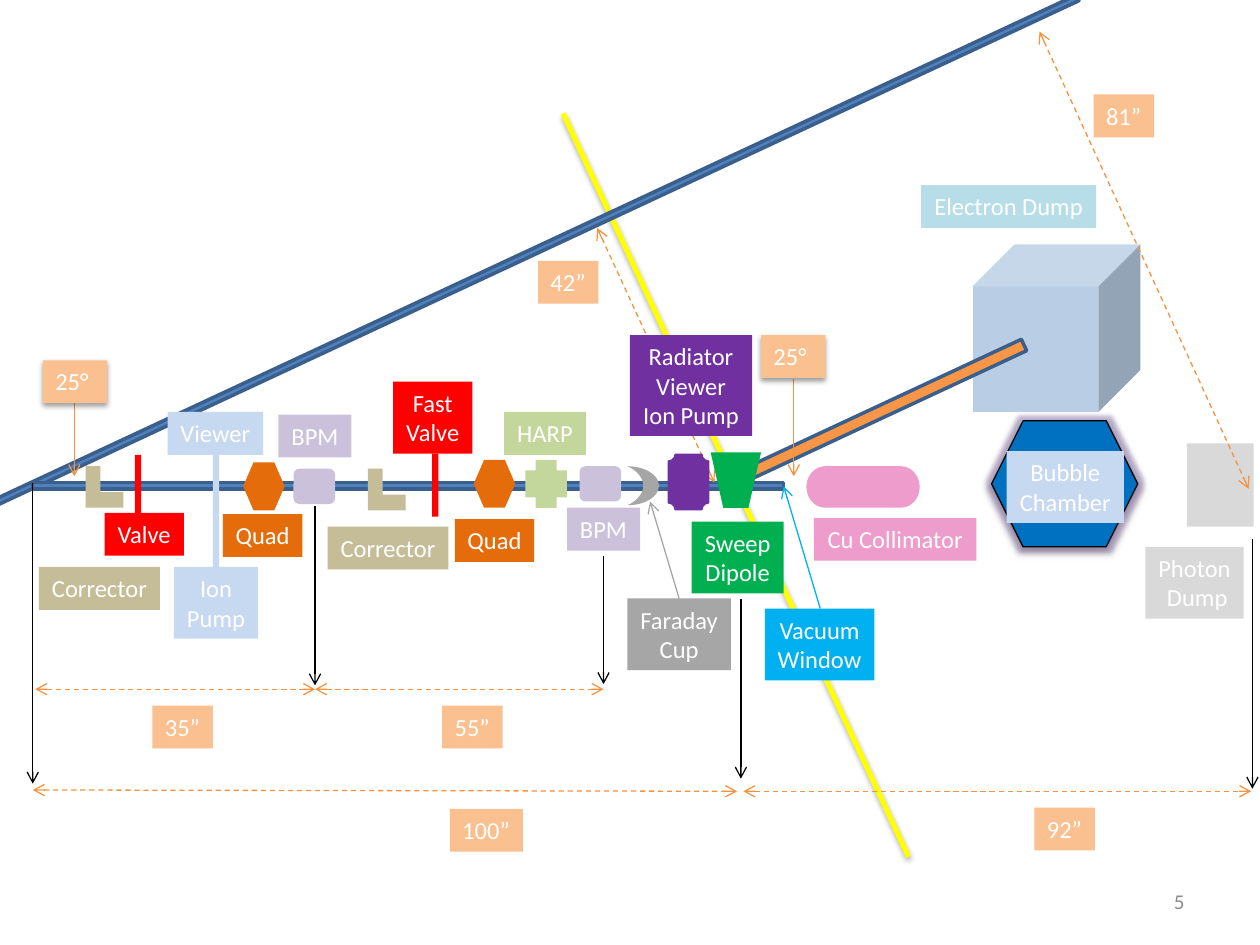
from typing import NamedTuple

from lxml.etree import SubElement
from pptx import Presentation
from pptx.dml.color import RGBColor
from pptx.enum.dml import MSO_LINE
from pptx.enum.shapes import MSO_CONNECTOR, MSO_SHAPE
from pptx.enum.text import MSO_ANCHOR, MSO_AUTO_SIZE, PP_ALIGN
from pptx.oxml.ns import qn
from pptx.util import Cm, Pt

COLORS = {
    "white": "FFFFFF", "black": "000000", "yellow": "FFFF00", "beam": "4F81BD",
    "outline": "3A5F8C", "dump_beam": "F79646", "distance": "FAC090",
    "dimension": "F69240", "valve": "FF0000", "viewer": "C6D9F1", "quad": "E46C0A",
    "monitor": "CCC1DA", "corrector": "C4BD97", "harp": "C3D69B",
    "radiator": "7030A0", "dipole": "00B050", "window": "00B0F0",
    "collimator": "EE9CCB", "electron_dump": "B7DEE8", "cube": "B9CDE5",
    "photon_dump": "D9D9D9", "chamber": "0070C0", "faraday": "A6A6A6",
    "number": "8C8C8C", "glow": "8064A2",
}
FONT = "Calibri"
BEAM_ANGLE = -25
EMU_PER_POINT = 12700


class Component(NamedTuple):
    preset: MSO_SHAPE
    left: float
    top: float
    width: float
    height: float
    color: str
    rotation: float = 0
    outline: str = ""
    outline_width: float = 2
    adjustments: tuple[float, ...] = ()
    glow: bool = False


class Label(NamedTuple):
    text: str
    left: float
    top: float
    width: float
    color: str
    shadow: bool = False
    alignment: PP_ALIGN = PP_ALIGN.CENTER


class Arrow(NamedTuple):
    start: tuple[float, float]
    end: tuple[float, float]
    color: str = "black"
    double: bool = False


BACKGROUND = [
    Component(MSO_SHAPE.CUBE, 7.72, 1.94, 1.33, 1.33, "cube"),
    Component(MSO_SHAPE.RECTANGLE, -0.48, 1.96, 9.48, 0.05, "beam", BEAM_ANGLE, "outline"),
    Component(MSO_SHAPE.RECTANGLE, 0.26, 3.83, 5.96, 0.05, "beam", 0, "outline"),
    Component(MSO_SHAPE.RECTANGLE, 5.64, 3.24, 2.61, 0.1, "dump_beam", BEAM_ANGLE, "outline"),
    Component(MSO_SHAPE.RECTANGLE, 9.42, 3.52, 0.53, 0.66, "photon_dump"),
]

CORNER = (0.41, 0.39)
COMPONENTS = [
    Component(MSO_SHAPE.CORNER, 0.68, 3.7, 0.3, 0.33, "corrector", adjustments=CORNER),
    Component(MSO_SHAPE.RECTANGLE, 1.07, 3.61, 0.05, 0.5, "valve"),
    Component(MSO_SHAPE.RECTANGLE, 1.69, 3.61, 0.05, 0.89, "viewer"),
    Component(MSO_SHAPE.HEXAGON, 1.93, 3.67, 0.33, 0.38, "quad"),
    Component(MSO_SHAPE.ROUNDED_RECTANGLE, 2.33, 3.72, 0.33, 0.28, "monitor"),
    Component(MSO_SHAPE.CORNER, 2.92, 3.72, 0.3, 0.33, "corrector", adjustments=CORNER),
    Component(MSO_SHAPE.RECTANGLE, 3.43, 3.6, 0.05, 0.5, "valve"),
    Component(MSO_SHAPE.HEXAGON, 3.76, 3.65, 0.33, 0.38, "quad"),
    Component(MSO_SHAPE.CROSS, 4.17, 3.65, 0.33, 0.38, "harp"),
    Component(MSO_SHAPE.ROUNDED_RECTANGLE, 4.6, 3.7, 0.33, 0.28, "monitor"),
    Component(MSO_SHAPE.MOON, 4.98, 3.7, 0.25, 0.31, "faraday", 180),
    Component(MSO_SHAPE.PLAQUE, 5.3, 3.6, 0.33, 0.45, "radiator"),
    Component(MSO_SHAPE.TRAPEZOID, 5.64, 3.59, 0.4, 0.44, "dipole", 180),
    Component(MSO_SHAPE.FLOWCHART_DIRECT_ACCESS_STORAGE, 6.4, 3.7, 0.9, 0.33, "collimator"),
    Component(MSO_SHAPE.HEXAGON, 7.87, 3.34, 1.16, 1, "chamber", 0, "black", 0.75, glow=True),
]

ARROWS = [
    Arrow((5.88, 4.75), (5.88, 6.18)),
    Arrow((0.26, 3.83), (0.26, 6.22)),
    Arrow((2.5, 4.02), (2.5, 5.44)),
    Arrow((4.79, 4.41), (4.79, 5.43)),
    Arrow((9.94, 4.28), (9.94, 6.26)),
    Arrow((0.59, 3.2), (0.59, 3.78), "dimension"),
    Arrow((6.3, 3.01), (6.3, 3.78), "dimension"),
    Arrow((6.51, 4.83), (6.22, 3.86), "window"),
    Arrow((5.39, 4.75), (5.16, 3.98), "faraday"),
    Arrow((4.74, 1.81), (5.67, 3.83), "dimension", True),
    Arrow((0.26, 6.27), (5.85, 6.28), "dimension", True),
    Arrow((0.28, 5.47), (2.5, 5.47), "dimension", True),
    Arrow((2.5, 5.47), (4.79, 5.47), "dimension", True),
    Arrow((5.9, 6.28), (9.93, 6.28), "dimension", True),
    Arrow((8.25, 0.25), (9.91, 3.88), "dimension", True),
]

LABELS = [
    Label("Corrector", 0.31, 4.5, 0.96, "corrector"),
    Label("Valve", 0.83, 4.07, 0.63, "valve"),
    Label("Viewer", 1.33, 3.27, 0.76, "viewer"),
    Label("Ion\nPump", 1.38, 4.5, 0.67, "viewer"),
    Label("Quad", 1.77, 4.08, 0.63, "quad"),
    Label("BPM", 2.21, 3.29, 0.58, "monitor"),
    Label("Corrector", 2.6, 4.18, 0.96, "corrector"),
    Label("Fast\nValve", 3.12, 3.03, 0.63, "valve"),
    Label("Quad", 3.61, 4.12, 0.63, "quad"),
    Label("HARP", 4, 3.27, 0.65, "harp"),
    Label("BPM", 4.5, 4.03, 0.58, "monitor"),
    Label("Faraday\nCup", 4.98, 4.75, 0.82, "faraday"),
    Label("Radiator\nViewer\nIon Pump", 5, 2.66, 0.97, "radiator"),
    Label("Sweep\nDipole", 5.49, 4.14, 0.73, "dipole"),
    Label("Vacuum\nWindow", 6.07, 4.83, 0.87, "window"),
    Label("Cu Collimator", 6.46, 4.11, 1.29, "collimator"),
    Label("Electron Dump", 7.31, 1.47, 1.39, "electron_dump"),
    Label("Bubble\nChamber", 7.99, 3.58, 0.93, "viewer"),
    Label("Photon\n Dump", 9.09, 4.34, 0.78, "photon_dump"),
    Label("25°", 0.34, 2.86, 0.51, "distance", True, PP_ALIGN.LEFT),
    Label("25°", 6.04, 2.66, 0.51, "distance", True, PP_ALIGN.LEFT),
] + [
    Label(text, left, top, width, "distance", False, PP_ALIGN.LEFT)
    for text, left, top, width in [
        ("42”", 4.27, 2.07, 0.48), ("35”", 1.21, 5.6, 0.48), ("55”", 3.51, 5.6, 0.48),
        ("100”", 3.57, 6.42, 0.58), ("92”", 8.21, 6.41, 0.48), ("81”", 8.68, 0.75, 0.48),
    ]
]


def inches(value: float) -> Cm:
    return Cm(value * 2.54)


def color_of(name: str) -> RGBColor:
    return RGBColor.from_string(COLORS[name])


def add_effect(effects, tag: str, color: str, opacity: int, **lengths: float) -> None:
    attributes = {name: str(int(value * EMU_PER_POINT)) for name, value in lengths.items()}
    effect = SubElement(effects, qn(tag), attributes)
    if tag == "a:outerShdw":
        effect.set("dir", "5400000")
        effect.set("rotWithShape", "0")
    fill = SubElement(effect, qn("a:srgbClr"), val=COLORS[color])
    SubElement(fill, qn("a:alpha"), val=str(opacity * 1000))


def add_component(slide, item: Component) -> None:
    shape = slide.shapes.add_shape(
        item.preset, *map(inches, (item.left, item.top, item.width, item.height)))
    shape.rotation = item.rotation
    shape.shadow.inherit = False
    shape.fill.solid()
    shape.fill.fore_color.rgb = color_of(item.color)
    for index, value in enumerate(item.adjustments):
        shape.adjustments[index] = value
    if item.outline:
        shape.line.color.rgb = color_of(item.outline)
        shape.line.width = Pt(item.outline_width)
    else:
        shape.line.fill.background()
    if item.glow:
        effects = shape._element.spPr.find(qn("a:effectLst"))
        add_effect(effects, "a:glow", "glow", 40, rad=5)
        add_effect(effects, "a:outerShdw", "black", 38, blurRad=3.1, dist=1.6)


def add_line(slide, start: tuple[float, float], end: tuple[float, float], color: str, width: float):
    connector = slide.shapes.add_connector(
        MSO_CONNECTOR.STRAIGHT, *map(inches, (*start, *end)))
    connector.line.color.rgb = color_of(color)
    connector.line.width = Pt(width)
    return connector, SubElement(connector._element.spPr, qn("a:effectLst"))


def add_arrow(slide, item: Arrow) -> None:
    connector, _ = add_line(slide, item.start, item.end, item.color, 0.75)
    if item.double:
        connector.line.dash_style = MSO_LINE.DASH
    line = connector.line._get_or_add_ln()
    for tag in ("a:headEnd", "a:tailEnd") if item.double else ("a:tailEnd",):
        SubElement(line, qn(tag), type="arrow")


def add_text(slide, item: Label, height: float, size: float, color: str):
    box = slide.shapes.add_textbox(*map(inches, (item.left, item.top, item.width, height)))
    box.text_frame.text = item.text
    for paragraph in box.text_frame.paragraphs:
        paragraph.alignment = item.alignment
        paragraph.font.name = FONT
        paragraph.font.size = Pt(size)
        paragraph.font.color.rgb = color_of(color)
    return box


def add_label(slide, item: Label) -> None:
    line_count = item.text.count("\n") + 1
    box = add_text(slide, item, 0.11 + 0.23 * line_count, 14, "white")
    box.text_frame.word_wrap = item.shadow
    box.text_frame.auto_size = MSO_AUTO_SIZE.SHAPE_TO_FIT_TEXT
    box.fill.solid()
    box.fill.fore_color.rgb = color_of(item.color)
    if item.shadow:
        effects = SubElement(box._element.spPr, qn("a:effectLst"))
        add_effect(effects, "a:outerShdw", "black", 38, blurRad=3.1, dist=1.6)


def main() -> None:
    presentation = Presentation()
    presentation.slide_width, presentation.slide_height = inches(10), inches(7.5)
    slide = presentation.slides.add_slide(presentation.slide_layouts[6])
    _, effects = add_line(slide, (4.47, 0.9), (7.21, 6.8), "yellow", 3)
    add_effect(effects, "a:outerShdw", "black", 35, blurRad=3.1, dist=1.8)
    for component in BACKGROUND:
        add_component(slide, component)
    for arrow in ARROWS:
        add_arrow(slide, arrow)
    for component in COMPONENTS:
        add_component(slide, component)
    for label in LABELS:
        add_label(slide, label)
    number = Label("5", 7.17, 6.95, 2.33, "number", alignment=PP_ALIGN.RIGHT)
    number_box = add_text(slide, number, 0.4, 12, "number")
    number_box.text_frame.word_wrap = True
    number_box.text_frame.vertical_anchor = MSO_ANCHOR.MIDDLE
    presentation.save("out.pptx")


if __name__ == "__main__":
    main()
